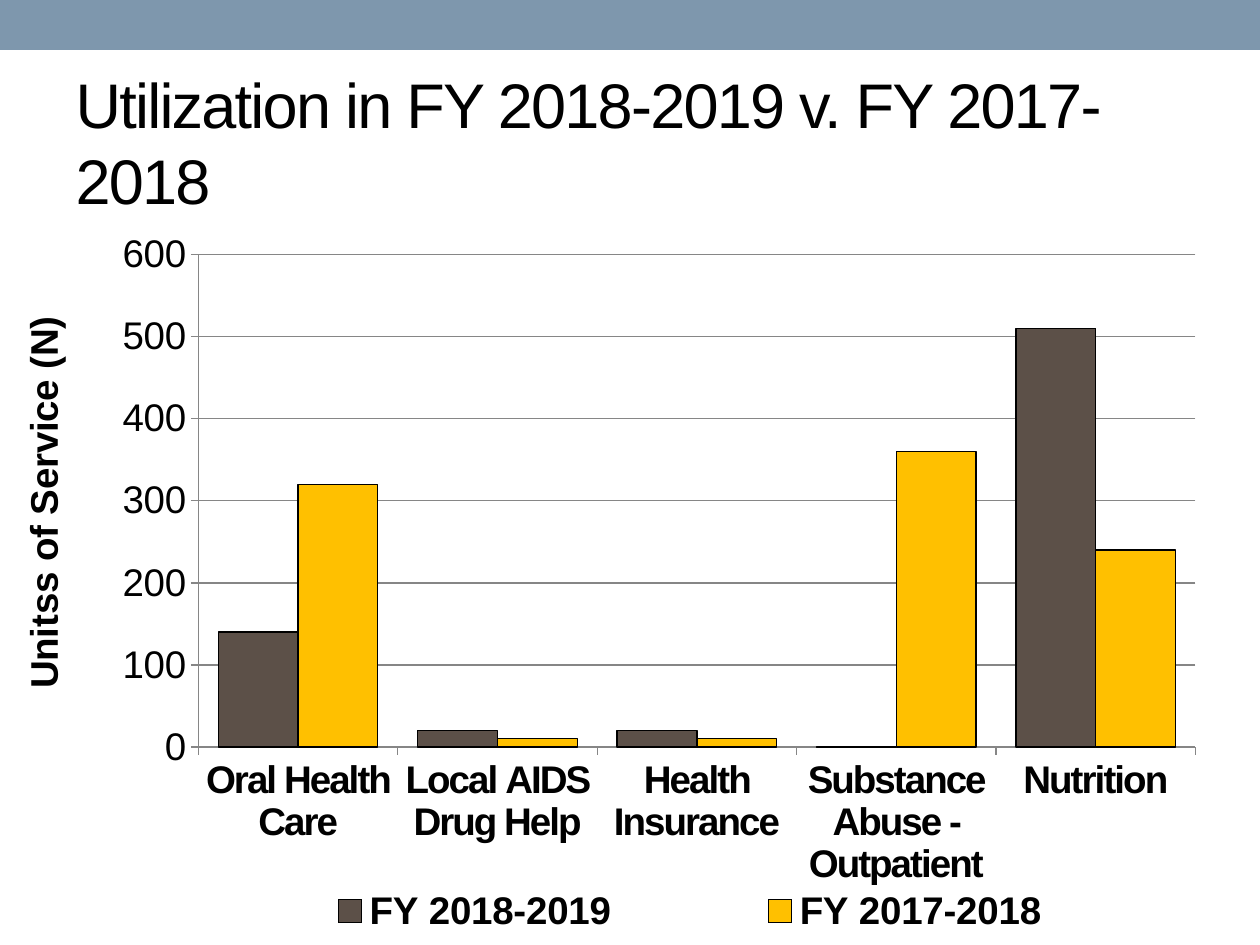
from dataclasses import dataclass

from pptx import Presentation
from pptx import util as u
from pptx.chart.data import CategoryChartData
from pptx.dml.color import RGBColor
from pptx.enum import chart as charts
from pptx.enum import shapes, text
from pptx.oxml import parse_xml
from pptx.oxml.ns import nsdecls, qn

PX = 914400 / 126
BLACK = RGBColor(0x00, 0x00, 0x00)
BAND_BLUE = RGBColor(0x7E, 0x97, 0xAD)
BROWN = RGBColor(0x5C, 0x50, 0x48)
GOLD = RGBColor(0xFF, 0xC0, 0x00)
GRID_GRAY = RGBColor(0x86, 0x86, 0x86)
FONT = "Arial"


@dataclass(frozen=True)
class Year:
    name: str
    values: tuple[int, ...]
    color: RGBColor


CATEGORIES = (
    "Oral Health Care",
    "Local AIDS Drug Help",
    "Health Insurance",
    "Substance Abuse - Outpatient",
    "Nutrition",
)
YEARS = (
    Year("FY 2018-2019", (140, 20, 20, 0, 510), BROWN),
    Year("FY 2017-2018", (320, 10, 10, 360, 240), GOLD),
)


def px(*lengths: int) -> list[u.Emu]:
    return [u.Emu(round(length * PX)) for length in lengths]


def style_font(font, size: int, bold: bool = False) -> None:
    font.name = FONT
    font.size = u.Pt(size)
    font.bold = bold
    font.color.rgb = BLACK


def set_layout(element, index: int, **settings: str | float) -> None:
    for old in element.findall(qn("c:layout")):
        element.remove(old)
    parts = "".join(f'<c:{key} val="{value}"/>' for key, value in settings.items())
    element.insert(index, parse_xml(
        f'<c:layout {nsdecls("c")}><c:manualLayout>{parts}</c:manualLayout></c:layout>'
    ))


def add_band(page) -> None:
    band = page.shapes.add_shape(shapes.MSO_SHAPE.RECTANGLE, *px(0, 0, 1260, 50))
    band.shadow.inherit = False
    band.fill.solid()
    band.fill.fore_color.rgb = BAND_BLUE
    band.line.fill.background()


def fill_title(page, words: str) -> None:
    box = page.shapes.title
    box.left, box.top, box.width, box.height = px(63, 73, 1134, 136)
    frame = box.text_frame
    frame.text = words
    frame.word_wrap = True
    frame.auto_size = text.MSO_AUTO_SIZE.NONE
    frame.vertical_anchor = text.MSO_ANCHOR.MIDDLE
    para = frame.paragraphs[0]
    para.alignment = text.PP_ALIGN.LEFT
    style_font(para.font, 36)
    para.runs[0].font._element.set("spc", "-100")


def style_axis(axis) -> None:
    axis.major_tick_mark = charts.XL_TICK_MARK.OUTSIDE
    axis.minor_tick_mark = charts.XL_TICK_MARK.NONE
    axis.format.line.color.rgb = GRID_GRAY


def add_utilization_chart(page) -> None:
    data = CategoryChartData()
    data.categories = CATEGORIES
    for year in YEARS:
        data.add_series(year.name, year.values)
    chart = page.shapes.add_chart(
        charts.XL_CHART_TYPE.COLUMN_CLUSTERED, *px(0, 231, 1210, 714), data
    ).chart
    chart.has_title = False
    style_font(chart.font, 22)

    plot = chart.plots[0]
    plot.gap_width = 50
    plot.overlap = 0
    plot.vary_by_categories = False
    set_layout(plot._element.getparent(), 0, layoutTarget="inner", xMode="edge",
               yMode="edge", x=0.164, y=0.033, w=0.824, h=0.69)
    for series, year in zip(plot.series, YEARS):
        series.format.fill.solid()
        series.format.fill.fore_color.rgb = year.color
        series.format.line.color.rgb = BLACK
        series.format.line.width = u.Pt(0.75)

    names = chart.category_axis
    style_axis(names)
    style_font(names.tick_labels.font, 22, bold=True)
    names.tick_labels.font._element.set("spc", "-100")

    units = chart.value_axis
    style_axis(units)
    style_font(units.tick_labels.font, 22)
    units.minimum_scale, units.maximum_scale, units.major_unit = 0, 600, 100
    units.tick_labels.number_format = "#,##0"
    units.tick_labels.number_format_is_linked = False
    units.has_major_gridlines = True
    units.major_gridlines.format.line.color.rgb = GRID_GRAY
    frame = units.axis_title.text_frame
    frame.text = "Unitss of Service (N)"
    style_font(frame.paragraphs[0].font, 22, bold=True)
    set_layout(units.axis_title._element, 1, xMode="edge", yMode="edge", x=0.01, y=0.11)

    chart.has_legend = True
    legend = chart.legend
    legend.position = charts.XL_LEGEND_POSITION.BOTTOM
    legend.include_in_layout = False
    style_font(legend.font, 22, bold=True)
    set_layout(legend._element, 1, xMode="edge", yMode="edge", x=0.16, y=0.92, w=0.82, h=0.07)


def main() -> None:
    deck = Presentation()
    deck.slide_width, deck.slide_height = px(1260, 945)
    page = deck.slides.add_slide(deck.slide_layouts[5])
    add_band(page)
    fill_title(page, "Utilization in FY 2018-2019 v. FY 2017-2018")
    add_utilization_chart(page)
    deck.save("out.pptx")


if __name__ == "__main__":
    main()
